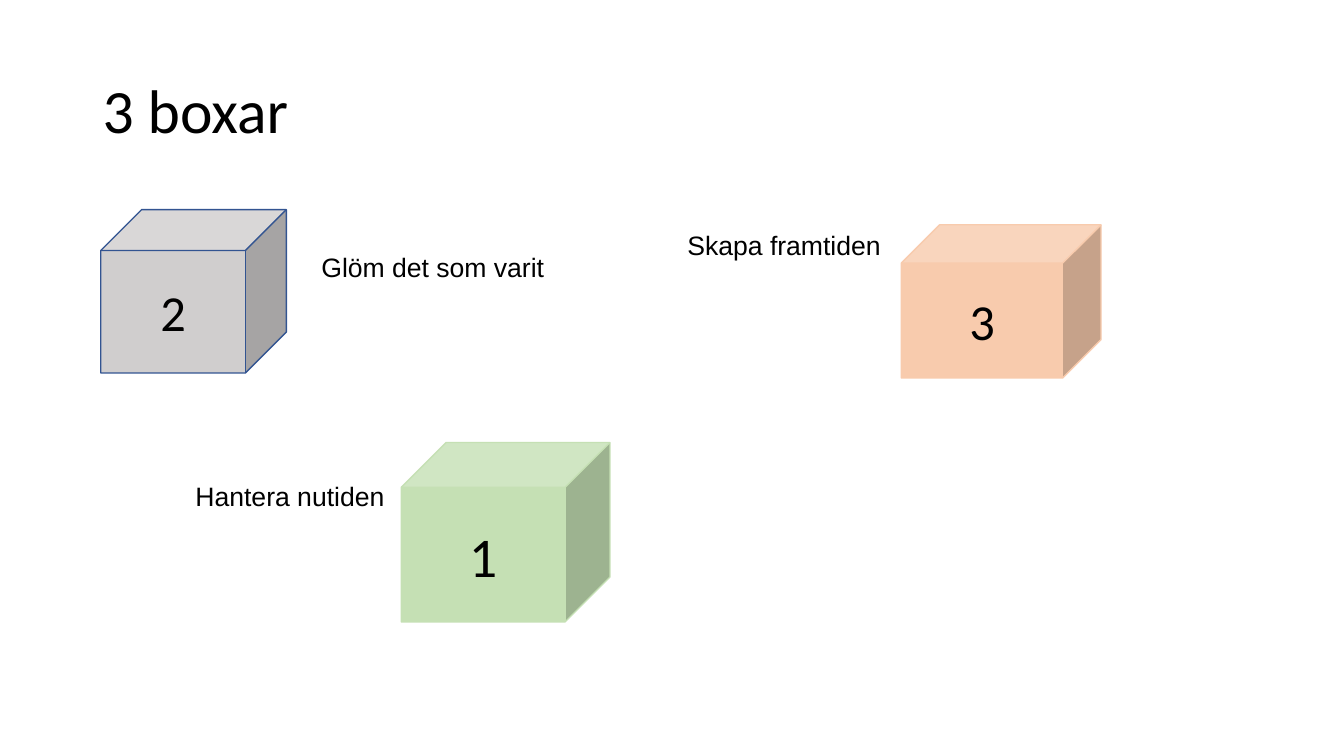
from pptx import Presentation
from pptx.dml.color import RGBColor
from pptx.enum.shapes import MSO_SHAPE
from pptx.enum.text import MSO_ANCHOR, MSO_AUTO_SIZE, PP_ALIGN
from pptx.util import Inches, Pt

CUBE = MSO_SHAPE.CUBE
MIDDLE = MSO_ANCHOR.MIDDLE
CENTER = PP_ALIGN.CENTER
FIT_TEXT = MSO_AUTO_SIZE.SHAPE_TO_FIT_TEXT

COLORS = {
    "text": "000000",
    "gray": "D0CECE",
    "blue": "325491",
    "orange": "F8CBAD",
    "green": "C5E0B4",
}


class BoxSlide:
    """Holds the fonts and colours and the slide being built."""

    heading_font = "Calibri"
    label_font = "Arial"

    def __init__(self, deck):
        self.slide = deck.slides.add_slide(deck.slide_layouts[6])

    def color(self, name):
        return RGBColor.from_string(COLORS[name])

    def set_text(self, shape, text, font, size):
        para = shape.text_frame.paragraphs[0]
        para.text = text
        para.font.name = font
        para.font.size = Pt(size)
        para.font.color.rgb = self.color("text")
        return para

    def text_box(self, place):
        return self.slide.shapes.add_textbox(*map(Inches, place))

    def title(self, text, place):
        box = self.text_box(place)
        box.text_frame.word_wrap = True
        box.text_frame.vertical_anchor = MIDDLE
        self.set_text(box, text, self.heading_font, 44).line_spacing = 0.9

    def cube(self, number, place, fill, line, size):
        cube = self.slide.shapes.add_shape(CUBE, *map(Inches, place))
        cube.shadow.inherit = False
        cube.fill.solid()
        cube.fill.fore_color.rgb = self.color(fill)
        cube.line.color.rgb = self.color(line)
        cube.line.width = Pt(1)
        cube.text_frame.vertical_anchor = MIDDLE
        self.set_text(cube, number, self.heading_font, size).alignment = CENTER

    def label(self, text, place):
        box = self.text_box(place)
        box.text_frame.word_wrap = False
        box.text_frame.auto_size = FIT_TEXT
        self.set_text(box, text, self.label_font, 19)


def main():
    deck = Presentation()
    deck.slide_width, deck.slide_height = Inches(13.33), Inches(7.5)
    page = BoxSlide(deck)

    # Title
    page.title("3 boxar", (0.92, 0.4, 11.5, 1.45))

    # Numbered cubes
    page.cube("3", (8.94, 2.23, 1.98, 1.52), "orange", "orange", 36)
    page.cube("2", (1, 2.08, 1.84, 1.62), "gray", "blue", 36)
    page.cube("1", (3.98, 4.39, 2.07, 1.78), "green", "green", 40)

    # Cube labels
    page.label("Hantera nutiden", (1.84, 4.71, 2.11, 0.42))
    page.label("Glöm det som varit", (3.09, 2.44, 2.44, 0.42))
    page.label("Skapa framtiden", (6.72, 2.22, 2.15, 0.42))

    deck.save("out.pptx")


if __name__ == "__main__":
    main()
